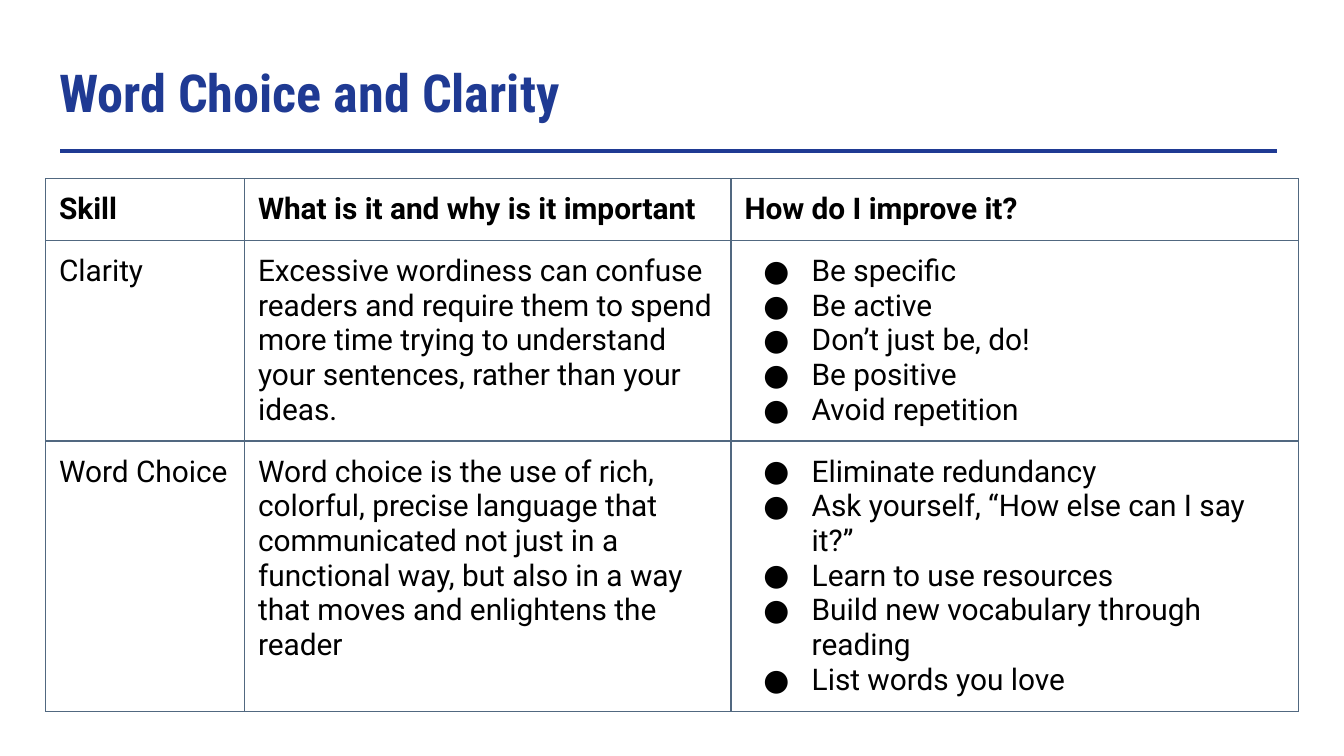
from lxml.etree import SubElement
from pptx import Presentation
from pptx.dml.color import RGBColor
from pptx.enum.shapes import MSO_CONNECTOR as Connector
from pptx.enum.text import MSO_ANCHOR as Anchor, MSO_AUTO_SIZE as AutoSize, PP_ALIGN as Align
from pptx.oxml.ns import qn
from pptx.util import Emu, Pt

PX = 4572
BLUE = RGBColor(0x1F, 0x3A, 0x93)
BLACK = RGBColor(0x00, 0x00, 0x00)
SLATE = RGBColor(0x51, 0x68, 0x80)
BODY_FONT = "Roboto"
TITLE_FONT = "Roboto Condensed"
INSET = 20

COLUMN_WIDTHS = [296, 724, 844]
ROW_HEIGHTS = [92, 298, 402]
HEADINGS = ["Skill", "What is it and why is it important", "How do I improve it?"]
SKILLS = [
    (
        "Clarity",
        "Excessive wordiness can confuse readers and require them to spend more time "
        "trying to understand your sentences, rather than your ideas.",
        ["Be specific", "Be active", "Don’t just be, do!", "Be positive", "Avoid repetition"],
    ),
    (
        "Word Choice",
        "Word choice is the use of rich, colorful, precise language that communicated "
        "not just in a functional way, but also in a way that moves and enlightens the reader",
        [
            "Eliminate redundancy",
            "Ask yourself, “How else can I say it?”",
            "Learn to use resources",
            "Build new vocabulary through reading",
            "List words you love",
        ],
    ),
]


def px(length):
    return Emu(length * PX)


def set_insets(box):
    box.margin_left = box.margin_right = px(INSET)
    box.margin_top = box.margin_bottom = px(INSET)


def add_run(paragraph, text, font_name, size, color, bold):
    paragraph.alignment = Align.LEFT
    run = paragraph.add_run()
    run.text = text
    run.font.name = font_name
    run.font.size = Pt(size)
    run.font.color.rgb = color
    run.font.bold = bold


def add_bullet(paragraph):
    properties = paragraph._p.get_or_add_pPr()
    properties.set("marL", str(px(100)))
    properties.set("indent", str(px(-72)))
    color = SubElement(properties, qn("a:buClr"))
    SubElement(color, qn("a:srgbClr"), val=str(BLACK))
    SubElement(properties, qn("a:buFont"), typeface=BODY_FONT)
    SubElement(properties, qn("a:buChar"), char="●")


def add_borders(cell):
    properties = cell._tc.get_or_add_tcPr()
    for side in ("lnL", "lnR", "lnT", "lnB"):
        line = SubElement(properties, qn(f"a:{side}"), w=str(Pt(0.75)))
        fill = SubElement(line, qn("a:solidFill"))
        SubElement(fill, qn("a:srgbClr"), val=str(SLATE))


def place_title(slide, left, top, width, height):
    title = slide.shapes.title
    title.left, title.top, title.width, title.height = map(px, (left, top, width, height))
    frame = title.text_frame
    set_insets(frame)
    frame.word_wrap = True
    frame.auto_size = AutoSize.NONE
    frame.vertical_anchor = Anchor.TOP
    add_run(frame.paragraphs[0], "Word Choice and Clarity", TITLE_FONT, 28, BLUE, True)


def add_rule(slide, left, top, width):
    rule = slide.shapes.add_connector(
        Connector.STRAIGHT, px(left), px(top), px(left + width), px(top)
    )
    rule.line.color.rgb = BLUE
    rule.line.width = Pt(2.25)
    SubElement(rule._element.spPr, qn("a:effectLst"))


def fill_cell(cell, content, bold):
    set_insets(cell)
    cell.vertical_anchor = Anchor.TOP
    add_borders(cell)
    cell.fill.background()
    bulleted = isinstance(content, list)
    frame = cell.text_frame
    for index, text in enumerate(content if bulleted else [content]):
        paragraph = frame.add_paragraph() if index else frame.paragraphs[0]
        add_run(paragraph, text, BODY_FONT, 16, BLACK, bold)
        if bulleted:
            add_bullet(paragraph)


def add_skills_table(slide, left, top):
    rows = [HEADINGS, *SKILLS]
    table = slide.shapes.add_table(
        len(rows), len(HEADINGS), px(left), px(top),
        px(sum(COLUMN_WIDTHS)), px(sum(ROW_HEIGHTS)),
    ).table
    table.first_row = False
    table.horz_banding = False
    for column, width in zip(table.columns, COLUMN_WIDTHS):
        column.width = px(width)
    for row, height in zip(table.rows, ROW_HEIGHTS):
        row.height = px(height)
    for row_index, row in enumerate(rows):
        for column_index, content in enumerate(row):
            fill_cell(table.cell(row_index, column_index), content, row_index == 0)


def main():
    presentation = Presentation()
    presentation.slide_width = px(2000)
    presentation.slide_height = px(1125)
    slide = presentation.slides.add_slide(presentation.slide_layouts[5])
    place_title(slide, 68, 70, 1864, 126)
    add_rule(slide, 90, 225, 1810)
    add_skills_table(slide, 68, 266)
    presentation.save("out.pptx")


if __name__ == "__main__":
    main()
